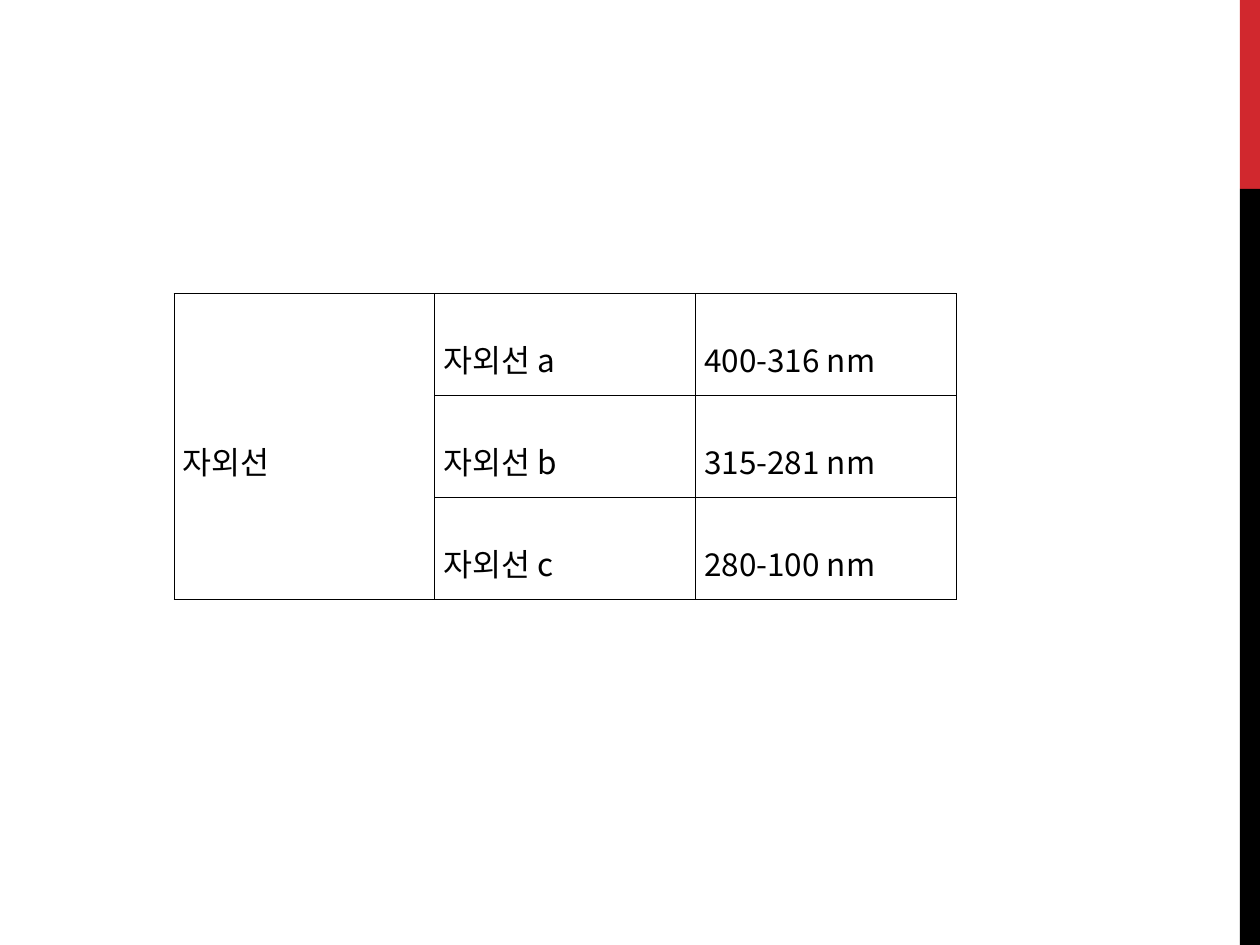
from dataclasses import dataclass

import pptx
import pptx.dml.color
import pptx.enum.shapes
import pptx.enum.text
import pptx.oxml
import pptx.oxml.ns
import pptx.util
from pptx.util import Inches


@dataclass(frozen=True)
class Theme:
    font: str = "Noto Sans CJK KR"
    text: str = "000000"
    accent: str = "D1282E"
    bar: str = "000000"
    border: str = "000000"
    size: float = 18
    border_width: float = 0.28
    line_spacing: float = 1.6


class SlideBuilder:
    def __init__(self, slide, theme):
        self.s = slide
        self.theme = theme

    def rectangle(self, left, top, width, height, color):
        sp = self.s.shapes.add_shape(
            pptx.enum.shapes.MSO_SHAPE.RECTANGLE,
            Inches(left), Inches(top), Inches(width), Inches(height))
        sp.shadow.inherit = False
        sp.fill.solid()
        sp.fill.fore_color.rgb = pptx.dml.color.RGBColor.from_string(color)
        sp.line.fill.background()

    def table(self, left, top, col_width, row_height, rows):
        """Draw a bordered table; a None entry continues the cell above."""
        n_rows, n_cols = len(rows), len(rows[0])
        table = self.s.shapes.add_table(
            n_rows, n_cols, Inches(left), Inches(top),
            Inches(col_width * n_cols), Inches(row_height * n_rows)).table
        table.first_row = table.horz_banding = False
        for column in table.columns:
            column.width = Inches(col_width)
        for i, row in enumerate(rows):
            table.rows[i].height = Inches(row_height)
            for j, text in enumerate(row):
                cell = table.cell(i, j)
                self.cell_frame(cell)
                if text is not None:
                    self.cell_text(cell, text)
        for j in range(n_cols):
            start = 0
            for i in range(1, n_rows + 1):
                if i == n_rows or rows[i][j] is not None:
                    if i - start > 1:
                        table.cell(start, j).merge(table.cell(i - 1, j))
                    start = i

    def cell_frame(self, cell):
        """Set margins, borders and an empty fill."""
        cell.margin_left = cell.margin_right = Inches(0.07)
        cell.margin_top = cell.margin_bottom = Inches(0.02)
        cell.vertical_anchor = pptx.enum.text.MSO_ANCHOR.MIDDLE
        cell.fill.background()
        width = pptx.util.Pt(self.theme.border_width)
        props = cell._tc.get_or_add_tcPr()
        for k, side in enumerate(("lnL", "lnR", "lnT", "lnB")):
            props.insert(k, pptx.oxml.parse_xml(
                f'<a:{side} {pptx.oxml.ns.nsdecls("a")} w="{width}"><a:solidFill>'
                f'<a:srgbClr val="{self.theme.border}"/></a:solidFill></a:{side}>'))

    def cell_text(self, cell, text):
        cell.text_frame.text = text
        p = cell.text_frame.paragraphs[0]
        p.alignment = pptx.enum.text.PP_ALIGN.JUSTIFY
        p.line_spacing = self.theme.line_spacing
        r = p.runs[0]
        r.font.size = pptx.util.Pt(self.theme.size)
        r.font.color.rgb = pptx.dml.color.RGBColor.from_string(self.theme.text)
        r.font.name = self.theme.font
        r.font._element.append(pptx.oxml.parse_xml(
            f'<a:ea {pptx.oxml.ns.nsdecls("a")} typeface="{self.theme.font}"/>'))


def main():
    prs = pptx.Presentation()
    prs.slide_width, prs.slide_height = Inches(10), Inches(7.5)
    theme = Theme()
    slide = SlideBuilder(prs.slides.add_slide(prs.slide_layouts[6]), theme)
    slide.rectangle(9.84, 0, 0.16, 1.5, theme.accent)
    slide.rectangle(9.84, 1.5, 0.16, 6, theme.bar)
    slide.table(1.38, 2.33, 2.07, 0.81, [
        ["자외선", "자외선 a", "400-316 nm"],
        [None, "자외선 b", "315-281 nm"],
        [None, "자외선 c", "280-100 nm"],
    ])
    prs.save("out.pptx")


if __name__ == "__main__":
    main()
